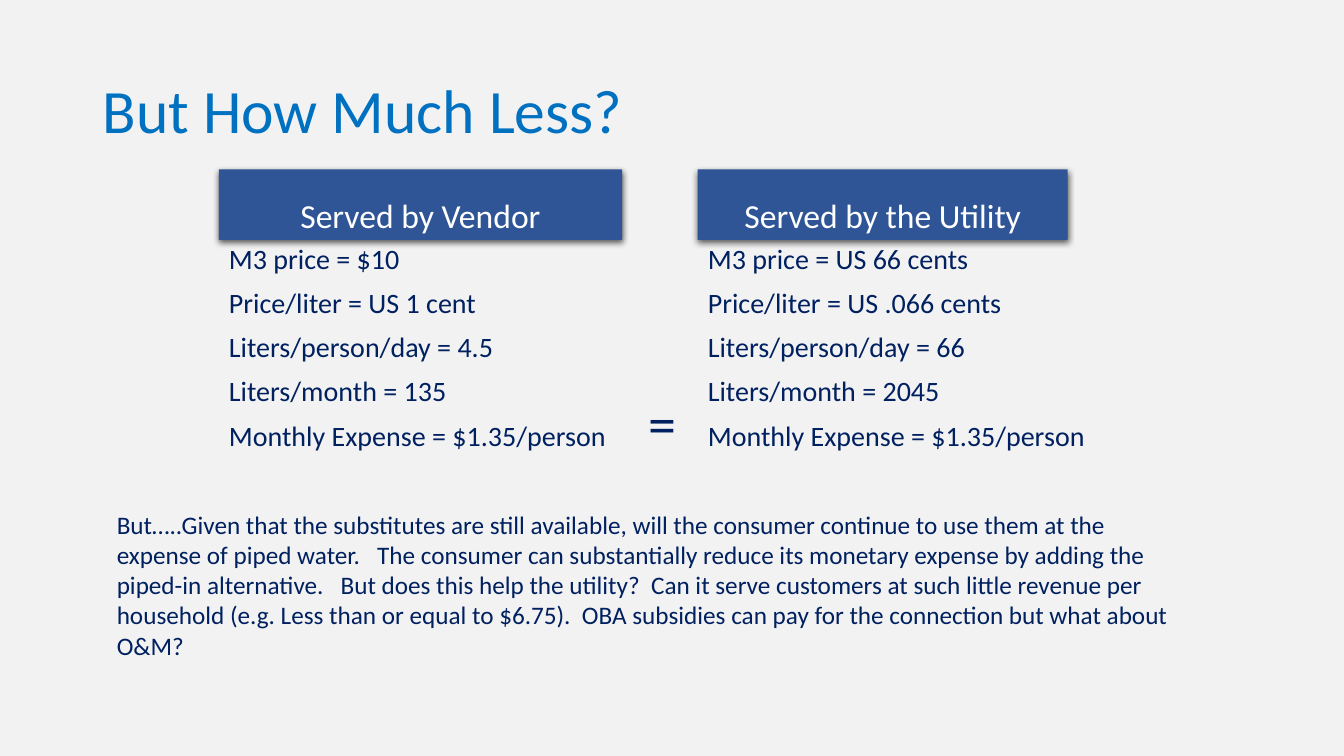
from dataclasses import dataclass

from lxml.etree import SubElement
from pptx import Presentation
from pptx.dml.color import RGBColor
from pptx.enum.text import MSO_ANCHOR, MSO_AUTO_SIZE, PP_ALIGN
from pptx.oxml.ns import qn
from pptx.util import Inches, Pt

COLORS = {
    "back": "F2F2F2",
    "title": "0070C0",
    "band": "2F5597",
    "white": "FFFFFF",
    "text": "002060",
    "shade": "000000",
}


@dataclass
class Box:
    left: float
    top: float
    width: float
    height: float


@dataclass
class Style:
    size: int
    color: str
    align: PP_ALIGN = PP_ALIGN.LEFT
    anchor: MSO_ANCHOR = MSO_ANCHOR.TOP
    line: float = 1.0
    before: int = 0


@dataclass
class Column:
    slot: int
    head: str
    head_box: Box
    list_box: Box
    items: list[str]


TITLE = Style(44, "title", anchor=MSO_ANCHOR.MIDDLE, line=0.9)
HEAD = Style(24, "white", PP_ALIGN.CENTER, MSO_ANCHOR.BOTTOM, 2.0, 6)
LIST = Style(20, "text", line=0.9, before=10)
SIGN = Style(40, "text")
NOTE = Style(18, "text")

COLUMNS = [
    Column(1, "Served by Vendor", Box(2.17, 1.68, 4, 0.7), Box(2.17, 2.38, 4, 2.45), [
        "M3 price = $10",
        "Price/liter = US 1 cent",
        "Liters/person/day = 4.5",
        "Liters/month = 135",
        "Monthly Expense = $1.35/person",
    ]),
    Column(3, "Served by the Utility", Box(6.92, 1.68, 3.67, 0.7), Box(6.92, 2.38, 4.25, 4.32), [
        "M3 price = US 66 cents",
        "Price/liter = US .066 cents",
        "Liters/person/day = 66",
        "Liters/month = 2045",
        "Monthly Expense = $1.35/person",
    ]),
]

QUESTION = (
    "But…..Given that the substitutes are still available, will the consumer "
    "continue to use them at the expense of piped water.   The consumer can "
    "substantially reduce its monetary expense by adding the piped-in "
    "alternative.   But does this help the utility?  Can it serve customers at "
    "such little revenue per household (e.g. Less than or equal to $6.75).  OBA "
    "subsidies can pay for the connection but what about O&M?"
)


def rgb(name: str) -> RGBColor:
    return RGBColor.from_string(COLORS[name])


def place(shape, box: Box) -> None:
    shape.left, shape.top = Inches(box.left), Inches(box.top)
    shape.width, shape.height = Inches(box.width), Inches(box.height)


def write(shape, lines: list[str], style: Style) -> None:
    frame = shape.text_frame
    frame.text = "\n".join(lines)
    frame.word_wrap = True
    frame.auto_size = MSO_AUTO_SIZE.NONE
    frame.vertical_anchor = style.anchor
    for para in frame.paragraphs:
        para.alignment = style.align
        para.line_spacing = style.line
        para.space_before = Pt(style.before)
        # Plain lines: no bullet, no hanging indent
        props = para._p.get_or_add_pPr()
        props.set("marL", "0")
        props.set("indent", "0")
        SubElement(props, qn("a:buNone"))
        font = para.font
        font.name, font.size, font.bold = "Calibri", Pt(style.size), False
        font.color.rgb = rgb(style.color)


def shade(shape) -> None:
    effects = SubElement(shape._element.spPr, qn("a:effectLst"))
    outer = SubElement(effects, qn("a:outerShdw"), blurRad=str(Pt(4.5)),
                       dist=str(Pt(1.5)), dir="5400000", algn="ctr", rotWithShape="0")
    color = SubElement(outer, qn("a:srgbClr"), val=COLORS["shade"])
    SubElement(color, qn("a:alpha"), val="63000")


def add_text(slide, box: Box, text: str, style: Style) -> None:
    shape = slide.shapes.add_textbox(0, 0, 0, 0)
    place(shape, box)
    write(shape, [text], style)


def add_column(slide, col: Column) -> None:
    slots = {item.placeholder_format.idx: item for item in slide.placeholders}
    head, body = slots[col.slot], slots[col.slot + 1]
    place(head, col.head_box)
    head.fill.solid()
    head.fill.fore_color.rgb = rgb("band")
    shade(head)
    write(head, [col.head], HEAD)
    place(body, col.list_box)
    write(body, col.items, LIST)


def main() -> None:
    deck = Presentation()
    deck.slide_width, deck.slide_height = Inches(13.33), Inches(7.5)
    slide = deck.slides.add_slide(deck.slide_layouts.get_by_name("Comparison"))
    slide.background.fill.solid()
    slide.background.fill.fore_color.rgb = rgb("back")

    # Title
    title = slide.shapes.title
    place(title, Box(0.92, 0.4, 11.5, 1.45))
    write(title, ["But How Much Less?"], TITLE)

    # Two cost columns with the equals sign between them
    for col in COLUMNS:
        add_column(slide, col)
    add_text(slide, Box(6.33, 3.81, 0.58, 0.77), "=", SIGN)

    # Closing question
    add_text(slide, Box(1.06, 5, 10.75, 1.62), QUESTION, NOTE)
    deck.save("out.pptx")


if __name__ == "__main__":
    main()
